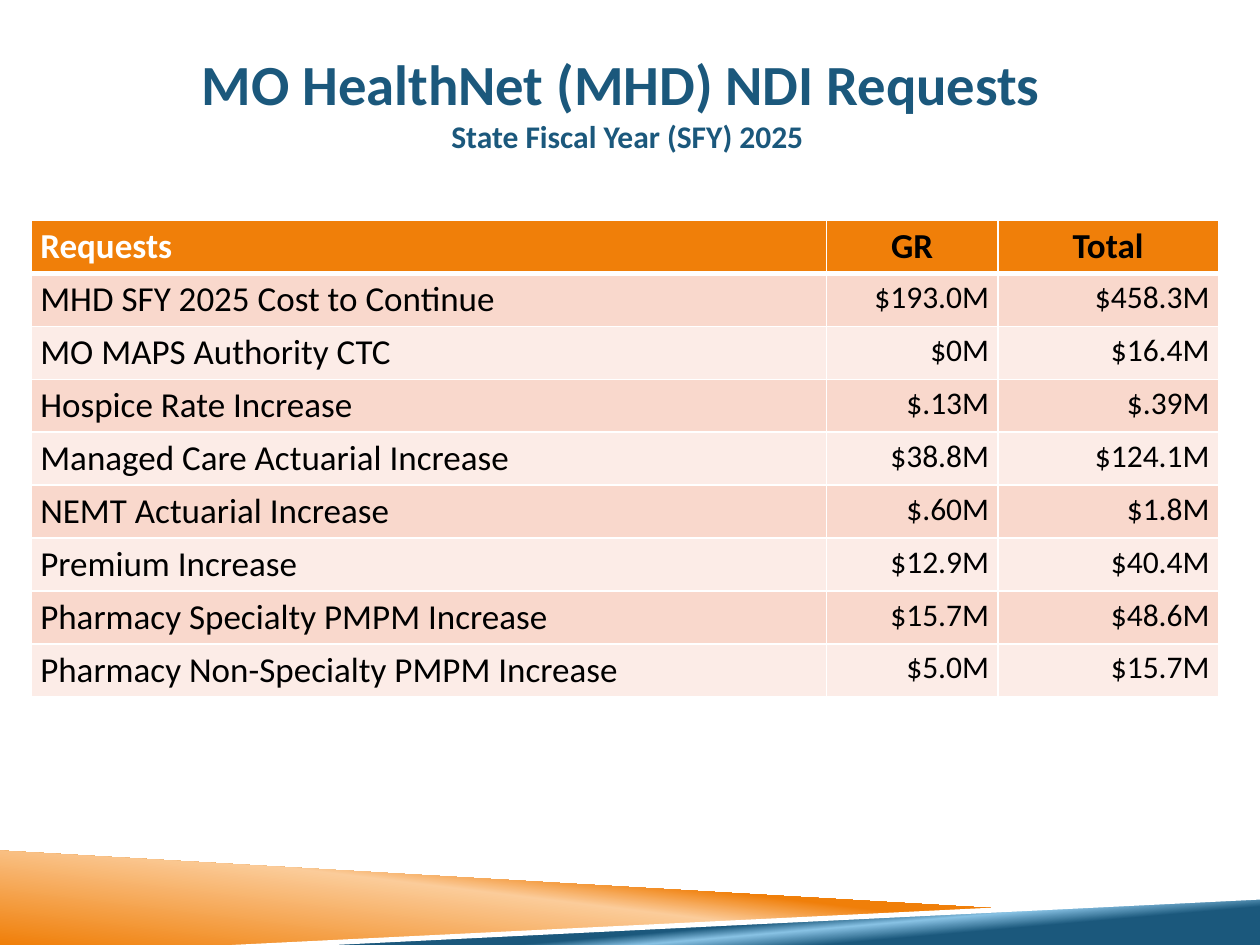
"""Build the MO HealthNet NDI requests slide."""
from lxml import etree
from pptx import Presentation
from pptx.dml.color import RGBColor
from pptx.enum.text import MSO_ANCHOR, MSO_AUTO_SIZE, PP_ALIGN
from pptx.oxml.ns import qn
from pptx.util import Inches, Pt

LEFT, MID, RIGHT = PP_ALIGN.LEFT, PP_ALIGN.CENTER, PP_ALIGN.RIGHT
CENTRE = MSO_ANCHOR.MIDDLE
FIXED = MSO_AUTO_SIZE.NONE
FONT = "Calibri"
BLUE = RGBColor(0x1B, 0x58, 0x7C)
SKY = RGBColor(0x89, 0xC3, 0xE5)
ORANGE = RGBColor(0xF0, 0x7F, 0x09)
PEACH = RGBColor(0xFB, 0xCC, 0x9A)
ROSE = RGBColor(0xF9, 0xD8, 0xCC)
PALE = RGBColor(0xFC, 0xEC, 0xE7)
WHITE = RGBColor(0xFF, 0xFF, 0xFF)
BLACK = RGBColor(0, 0, 0)

TITLE = [("MO HealthNet (MHD) NDI Requests ", 32.4),
         ("State Fiscal Year (SFY) 2025", 18)]
ROWS = [
    ("Requests", "GR", "Total"),
    ("MHD SFY 2025 Cost to Continue", "$193.0M", "$458.3M"),
    ("MO MAPS Authority CTC", "$0M", "$16.4M"),
    ("Hospice Rate Increase", "$.13M", "$.39M"),
    ("Managed Care Actuarial Increase", "$38.8M", "$124.1M"),
    ("NEMT Actuarial Increase", "$.60M", "$1.8M"),
    ("Premium Increase", "$12.9M", "$40.4M"),
    ("Pharmacy Specialty PMPM Increase", "$15.7M", "$48.6M"),
    ("Pharmacy Non-Specialty PMPM Increase", "$5.0M", "$15.7M"),
]
WIDTHS = [6.31, 1.36, 1.75]
HIGH = 0.41
BANDS = [
    ([(0, 6.75), (7.92, 7.21), (2, 7.5), (0, 7.5)],
     [(0, ORANGE), (52, PEACH), (66, ORANGE)], 277),
    ([(1.98, 7.5), (10, 7.12), (10, 7.5)],
     [(28, BLUE), (40, SKY), (48, BLUE)], 265),
    ([(10, 7.1), (1.84, 7.5), (2.66, 7.5), (10, 7.14)], None, 0),
]


def add_run(para, text, size, color, bold):
    run = para.add_run()
    run.text = text
    font = run.font
    font.name, font.size, font.bold = FONT, Pt(size), bold
    font.color.rgb = color


def add_color(parent, color):
    etree.SubElement(parent, qn("a:srgbClr"), val=str(color))


def shade(shape, stops, angle):
    shape.fill.background()
    old = shape._element.spPr.find(qn("a:noFill"))
    grad = etree.Element(qn("a:gradFill"), rotWithShape="1")
    items = etree.SubElement(grad, qn("a:gsLst"))
    for pos, color in stops:
        add_color(etree.SubElement(items, qn("a:gs"), pos=str(pos * 1000)), color)
    etree.SubElement(grad, qn("a:lin"), ang=str(angle * 60000), scaled="0")
    old.getparent().replace(old, grad)


def add_band(slide, points, stops, angle):
    spots = [(Inches(x), Inches(y)) for x, y in points]
    form = slide.shapes.build_freeform(*spots[0])
    form.add_line_segments(spots[1:], close=True)
    shape = form.convert_to_shape()
    shape.shadow.inherit = False
    shape.line.fill.background()
    if stops:
        shade(shape, stops, angle)
    else:
        shape.fill.solid()
        shape.fill.fore_color.rgb = WHITE


def add_title(slide):
    title = slide.shapes.title
    title.left, title.top = Inches(0.67), Inches(0.33)
    title.width, title.height = Inches(8.62), Inches(0.96)
    frame = title.text_frame
    frame.auto_size, frame.word_wrap = FIXED, True
    frame.vertical_anchor = CENTRE
    frame.margin_left = frame.margin_right = 0
    para = frame.paragraphs[0]
    para.alignment = MID
    for i, (text, size) in enumerate(TITLE):
        if i:
            para.add_line_break()
        add_run(para, text, size, BLUE, True)


def set_edges(cell, head, below):
    props = cell._tc.get_or_add_tcPr()
    for side in "LRTB":
        thick = (head and side == "B") or (below and side == "T")
        line = etree.SubElement(props, qn("a:ln" + side),
                                w=str(Pt(3 if thick else 1)))
        add_color(etree.SubElement(line, qn("a:solidFill")), WHITE)


def add_grid(slide):
    grid = slide.shapes.add_table(
        len(ROWS), len(WIDTHS), Inches(0.25), Inches(1.75),
        Inches(sum(WIDTHS)), Inches(HIGH * len(ROWS))).table
    for col, width in zip(grid.columns, WIDTHS):
        col.width = Inches(width)
    for r, row in enumerate(ROWS):
        grid.rows[r].height = Inches(HIGH)
        head = r == 0
        for c, text in enumerate(row):
            cell = grid.cell(r, c)
            set_edges(cell, head, r == 1)
            cell.fill.solid()
            cell.fill.fore_color.rgb = ORANGE if head else ROSE if r % 2 else PALE
            cell.margin_left = cell.margin_right = Inches(0.07)
            cell.margin_top = cell.margin_bottom = Inches(0.04)
            para = cell.text_frame.paragraphs[0]
            para.alignment = LEFT if c == 0 else MID if head else RIGHT
            size = 20 if head or c == 0 else 18
            add_run(para, text, size, WHITE if head and c == 0 else BLACK, head)


def main():
    deck = Presentation()
    deck.slide_width, deck.slide_height = Inches(10), Inches(7.5)
    slide = deck.slides.add_slide(deck.slide_layouts[5])
    for band in BANDS:
        add_band(slide, *band)
    add_title(slide)
    add_grid(slide)
    deck.save("out.pptx")


if __name__ == "__main__":
    main()
